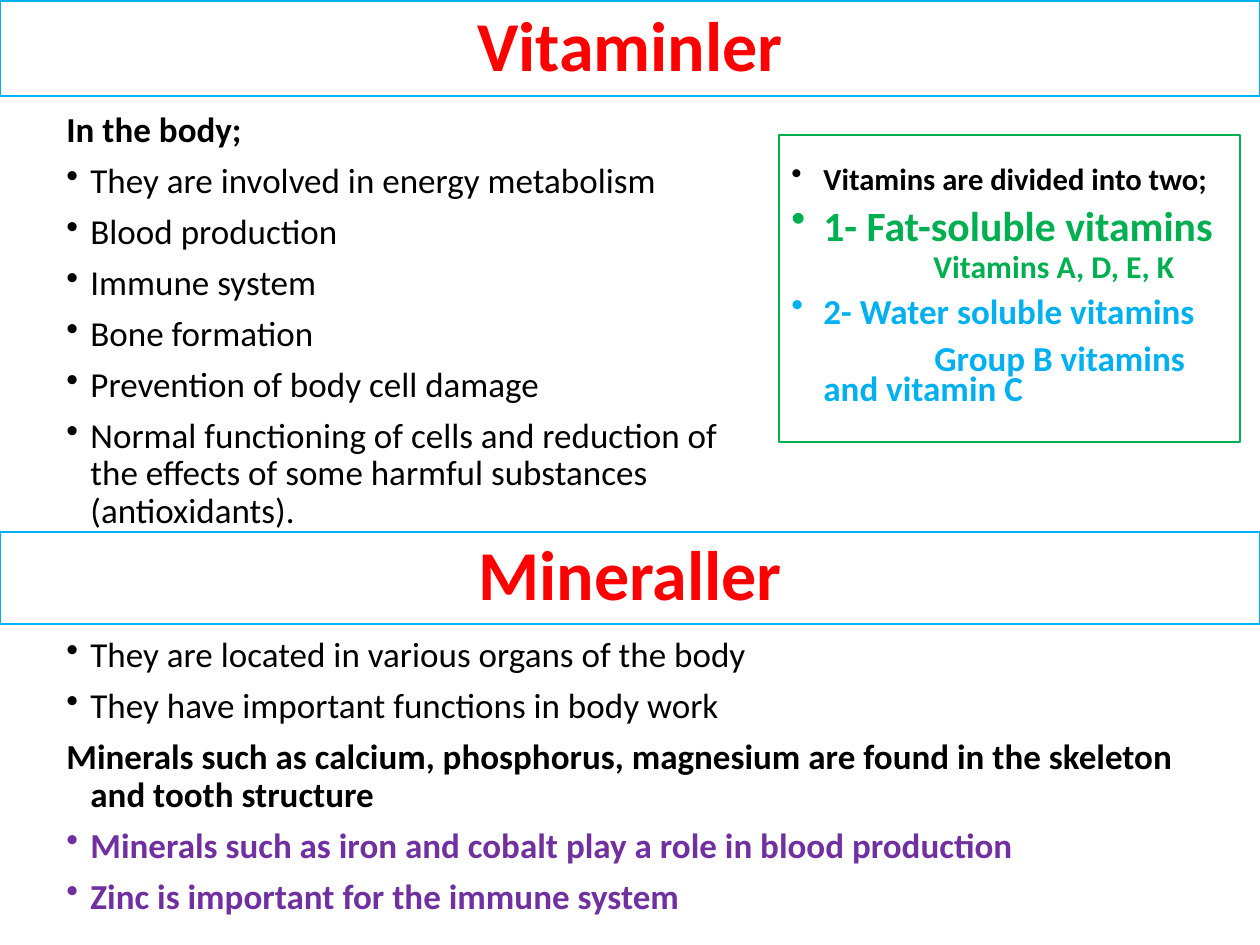
import pptx
import pptx.util
import pptx.dml.color
import pptx.enum.shapes
import pptx.enum.text
import pptx.oxml
import pptx.oxml.ns

Color = pptx.dml.color.RGBColor
BLACK = Color(0x00, 0x00, 0x00)
RED = Color(0xFF, 0x00, 0x00)
GREEN = Color(0x00, 0xB0, 0x50)
BLUE = Color(0x00, 0xB0, 0xF0)
PURPLE = Color(0x70, 0x30, 0xA0)
FONT = "Calibri"
EMU_PER_PX = 914400 / 126

# Content: text, bulleted, bold, colour
VITAMIN_ROLES = [
    ("In the body;", False, True, BLACK),
    ("They are involved in energy metabolism", True, False, BLACK),
    ("Blood production", True, False, BLACK),
    ("Immune system", True, False, BLACK),
    ("Bone formation", True, False, BLACK),
    ("Prevention of body cell damage", True, False, BLACK),
    ("Normal functioning of cells and reduction of the effects of some "
     "harmful substances (antioxidants).", True, False, BLACK),
]
MINERAL_ROLES = [
    ("They are located in various organs of the body", True, False, BLACK),
    ("They have important functions in body work", True, False, BLACK),
    ("Minerals such as calcium, phosphorus, magnesium are found in the "
     "skeleton and tooth structure", False, True, BLACK),
    ("Minerals such as iron and cobalt play a role in blood production",
     True, True, PURPLE),
    ("Zinc is important for the immune system", True, True, PURPLE),
]
# Content: text, size, colour, space before, margin px, first-line indent px, bulleted
VITAMIN_GROUPS = [
    ("Vitamins are divided into two;", 17.5, BLACK, 10, 32, -32, True),
    ("1- Fat-soluble vitamins", 23.8, GREEN, 10, 32, -32, True),
    ("Vitamins A, D, E, K", 18.1, GREEN, 5, 142, 0, False),
    ("2- Water soluble vitamins", 20, BLUE, 10, 32, -32, True),
    ("Group B vitamins and vitamin C", 20, BLUE, 10, 32, 111, False),
]


def px(length):
    return pptx.util.Emu(round(length * EMU_PER_PX))


def place(box, left, top, width, height):
    box.left, box.top, box.width, box.height = map(px, (left, top, width, height))


def frame_box(box, color, anchor):
    """Give a box an outline, no fill and vertically anchored text."""
    box.fill.background()
    box.line.color.rgb = color
    box.line.width = pptx.util.Pt(0.75)
    box.text_frame.word_wrap = True
    box.text_frame.auto_size = pptx.enum.text.MSO_AUTO_SIZE.NONE
    box.text_frame.vertical_anchor = anchor


def write(para, text, size, color, bold, spacing):
    para.text = text
    para.line_spacing = spacing
    for span in para.runs:
        span.font.name = FONT
        span.font.size = pptx.util.Pt(size)
        span.font.bold = bold
        span.font.color.rgb = color


def indent(para, margin, first_line, bulleted):
    properties = para._p.get_or_add_pPr()
    properties.set("marL", str(px(margin)))
    properties.set("indent", str(px(first_line)))
    tag = '<a:buChar %s char="•"/>' if bulleted else "<a:buNone %s/>"
    properties.append(pptx.oxml.parse_xml(tag % pptx.oxml.ns.nsdecls("a")))


def add_paragraph(frame, position, space):
    if position == 0:
        return frame.paragraphs[0]
    para = frame.add_paragraph()
    para.space_before = pptx.util.Pt(space)
    return para


def add_heading(box, text):
    frame_box(box, BLUE, pptx.enum.text.MSO_ANCHOR.MIDDLE)
    para = box.text_frame.paragraphs[0]
    write(para, text, 40, RED, True, 0.9)
    para.alignment = pptx.enum.text.PP_ALIGN.CENTER


def add_list(page, items, *place_px):
    box = page.shapes.add_textbox(0, 0, 0, 0)
    place(box, *place_px)
    box.text_frame.word_wrap = True
    for position, (text, bulleted, bold, color) in enumerate(items):
        para = add_paragraph(box.text_frame, position, 7.5)
        indent(para, 24, -24, bulleted)
        write(para, text, 20, color, bold, 0.9)


def main():
    deck = pptx.Presentation()
    deck.slide_width, deck.slide_height = px(1260), px(945)
    page = deck.slides.add_slide(deck.slide_layouts[5])
    rectangle = pptx.enum.shapes.MSO_SHAPE.RECTANGLE

    # Vitamins heading
    title = page.shapes.title
    place(title, 0, 1, 1260, 95)
    add_heading(title, "Vitaminler")

    # Vitamin groups panel
    panel = page.shapes.add_shape(rectangle, 0, 0, 0, 0)
    panel.shadow.inherit = False
    place(panel, 779, 135, 461, 307)
    frame_box(panel, GREEN, pptx.enum.text.MSO_ANCHOR.MIDDLE)
    for position, item in enumerate(VITAMIN_GROUPS):
        text, size, color, space, margin, first_line, bulleted = item
        para = add_paragraph(panel.text_frame, position, space)
        para.alignment = pptx.enum.text.PP_ALIGN.LEFT
        indent(para, margin, first_line, bulleted)
        write(para, text, size, color, True, 0.7)

    # Roles of vitamins
    add_list(page, VITAMIN_ROLES, 54, 106, 725, 525)

    # Minerals heading and roles
    heading = page.shapes.add_shape(rectangle, 0, 0, 0, 0)
    heading.shadow.inherit = False
    place(heading, 0, 532, 1260, 92)
    add_heading(heading, "Mineraller")
    add_list(page, MINERAL_ROLES, 54, 631, 1153, 306)

    deck.save("out.pptx")


if __name__ == "__main__":
    main()
